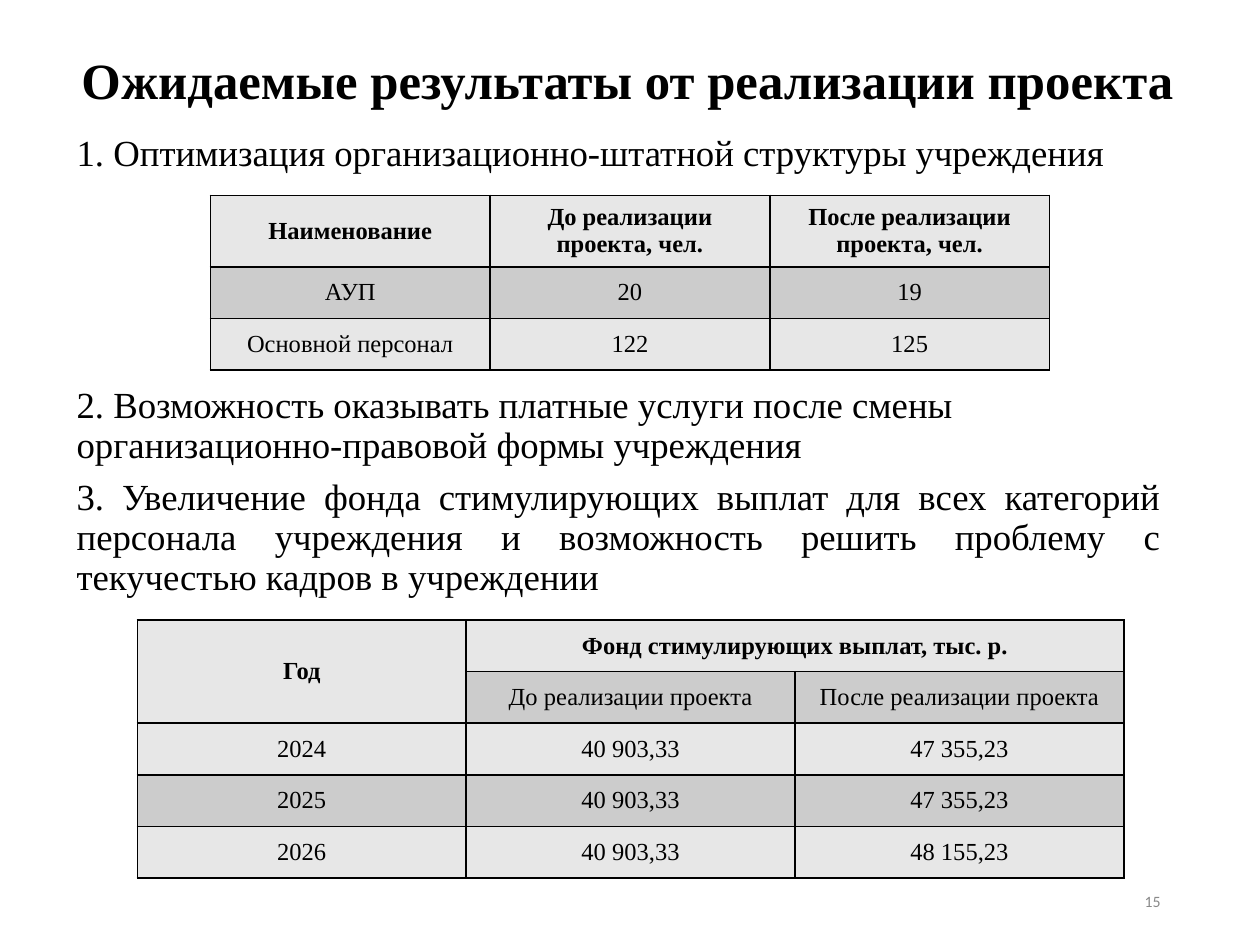
from pptx import Presentation
from pptx.dml.color import RGBColor
from pptx.enum.text import MSO_ANCHOR, MSO_AUTO_SIZE, PP_ALIGN
from pptx.oxml import parse_xml
from pptx.oxml.ns import nsdecls
from pptx.util import Inches, Pt

BLACK = RGBColor(0x00, 0x00, 0x00)
GRAY = RGBColor(0x89, 0x89, 0x89)
LIGHT = RGBColor(0xE7, 0xE7, 0xE7)
DARK = RGBColor(0xCC, 0xCC, 0xCC)
SERIF = "Times New Roman"

STAFF = [
    ["Наименование", "До реализации проекта, чел.", "После реализации проекта, чел."],
    ["АУП", "20", "19"],
    ["Основной персонал", "122", "125"],
]
FUND = [
    ["Год", "Фонд стимулирующих выплат, тыс. р.", ""],
    ["", "До реализации проекта", "После реализации проекта"],
    ["2024", "40 903,33", "47 355,23"],
    ["2025", "40 903,33", "47 355,23"],
    ["2026", "40 903,33", "48 155,23"],
]


def add_run(p, text, size, font=SERIF, color=BLACK, bold=False):
    r = p.add_run()
    r.text = text
    r.font.name = font
    r.font.size = Pt(size)
    r.font.bold = bold
    r.font.color.rgb = color


def set_title(s, text):
    title = s.shapes.title
    title.left, title.top = Inches(0.35), Inches(0.4)
    title.width, title.height = Inches(9.37), Inches(0.52)
    tf = title.text_frame
    tf.auto_size = MSO_AUTO_SIZE.NONE
    tf.vertical_anchor = MSO_ANCHOR.MIDDLE
    p = tf.paragraphs[0]
    p.alignment = PP_ALIGN.CENTER
    p.line_spacing = 0.9
    add_run(p, text, 29, bold=True)


def add_text_box(s, left, top, width, height):
    tf = s.shapes.add_textbox(Inches(left), Inches(top), Inches(width), Inches(height)).text_frame
    tf.word_wrap = True
    return tf


def add_body(s, top, height, items):
    """Add paragraphs given as (text, alignment) pairs."""
    tf = add_text_box(s, 0.51, top, 8.8, height)
    for i, (text, align) in enumerate(items):
        p = tf.add_paragraph() if i else tf.paragraphs[0]
        p.alignment = align
        p.line_spacing = 0.9
        p.space_before = Pt(7.5 if i else 0)
        add_run(p, text, 21)


def add_page_number(s, number):
    tf = add_text_box(s, 7.06, 6.95, 2.25, 0.4)
    tf.vertical_anchor = MSO_ANCHOR.MIDDLE
    p = tf.paragraphs[0]
    p.alignment = PP_ALIGN.RIGHT
    add_run(p, number, 9, "Calibri", GRAY)


def set_borders(cell):
    tcPr = cell._tc.get_or_add_tcPr()
    for i, side in enumerate(("lnL", "lnR", "lnT", "lnB")):
        tcPr.insert(i, parse_xml(
            f'<a:{side} {nsdecls("a")} w="{Pt(1)}"><a:solidFill>'
            f'<a:srgbClr val="{BLACK}"/></a:solidFill></a:{side}>'))


def add_grid(s, left, top, col_width, row_heights, rows):
    """Add a bordered table with a bold header and alternating row fills."""
    n_cols = len(rows[0])
    table = s.shapes.add_table(
        len(rows), n_cols, Inches(left), Inches(top),
        Inches(col_width * n_cols), Inches(sum(row_heights))).table
    for col in table.columns:
        col.width = Inches(col_width)
    for i, (values, height) in enumerate(zip(rows, row_heights)):
        table.rows[i].height = Inches(height)
        for j, text in enumerate(values):
            cell = table.cell(i, j)
            cell.fill.solid()
            cell.fill.fore_color.rgb = DARK if i % 2 else LIGHT
            cell.vertical_anchor = MSO_ANCHOR.MIDDLE
            set_borders(cell)
            if text:
                p = cell.text_frame.paragraphs[0]
                p.alignment = PP_ALIGN.CENTER
                add_run(p, text, 14, bold=i == 0)
    return table


def main():
    prs = Presentation()
    prs.slide_width, prs.slide_height = Inches(10), Inches(7.5)
    s = prs.slides.add_slide(prs.slide_layouts[5])

    set_title(s, "Ожидаемые результаты от реализации проекта ")
    add_body(s, 1.02, 0.45, [
        ("1. Оптимизация организационно-штатной структуры учреждения", PP_ALIGN.LEFT),
    ])
    add_body(s, 3.02, 1.8, [
        ("2. Возможность оказывать платные услуги после смены "
         "организационно-правовой формы учреждения", PP_ALIGN.LEFT),
        ("3. Увеличение фонда стимулирующих выплат для всех категорий персонала "
         "учреждения и возможность решить проблему с текучестью кадров в учреждении",
         PP_ALIGN.JUSTIFY),
    ])
    add_page_number(s, "15")

    add_grid(s, 1.67, 1.55, 2.22, [0.53, 0.41, 0.41], STAFF)
    fund = add_grid(s, 1.09, 4.92, 2.61, [0.41] * len(FUND), FUND)
    fund.cell(0, 0).merge(fund.cell(1, 0))
    fund.cell(0, 1).merge(fund.cell(0, 2))

    prs.save("out.pptx")


if __name__ == "__main__":
    main()
